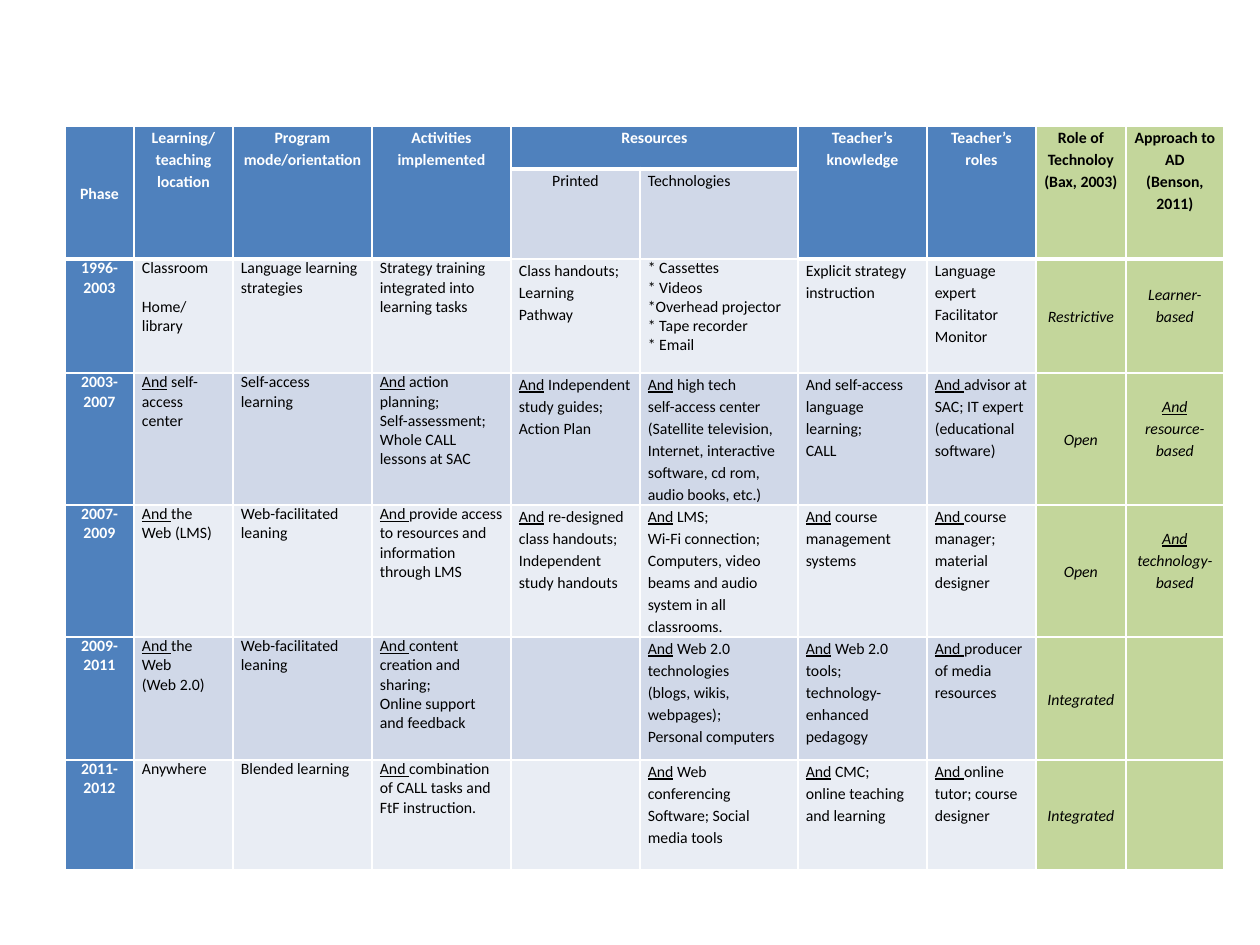
from lxml import etree
from pptx import Presentation
from pptx.dml.color import RGBColor
from pptx.enum.text import MSO_ANCHOR, PP_ALIGN
from pptx.oxml.ns import qn
from pptx.util import Emu, Pt

LEFT, CENTER = PP_ALIGN.LEFT, PP_ALIGN.CENTER
TOP, MIDDLE = MSO_ANCHOR.TOP, MSO_ANCHOR.MIDDLE

WHITE, BLACK = "FFFFFF", "000000"
BLUE, GREEN = "4F81BD", "C3D69B"
PALE, SOFT = "E9EDF4", "D0D8E8"
INSET, LINE = 8, 22
LOOSE, TIGHT = 1.15, 1.0

TABLE_BOX = (65, 126, 1159, 744)
COLUMN_WIDTHS = [69, 99, 139, 139, 129, 158, 129, 109, 90, 98]
ROW_HEIGHTS = [43, 90, 114, 132, 132, 123, 110]
RESOURCE_COLUMNS = (4, 5)
ROLE, APPROACH = 8, 9
PHASE_START = 2

HEADINGS = {
    0: "Phase",
    1: "Learning/ teaching\nlocation",
    2: "Program mode/orientation",
    3: "Activities implemented",
    4: "Resources",
    6: "Teacher’s knowledge",
    7: "Teacher’s roles",
    8: "Role of\nTechnoloy\n(Bax, 2003)",
    9: "Approach to AD\n(Benson, 2011)",
}

PHASES = [
    ["1996-2003", "Classroom\nHome/\nlibrary", "Language learning strategies",
     "Strategy training integrated into learning tasks",
     "Class handouts;\nLearning\nPathway",
     "* Cassettes\n* Videos\n*Overhead projector\n* Tape recorder\n* Email",
     "Explicit strategy instruction", "Language expert Facilitator\nMonitor",
     "Restrictive", "Learner-based"],
    ["2003-2007", "_And_ self-access center", "Self-access learning",
     "_And_ action planning;\nSelf-assessment;\nWhole CALL lessons at SAC",
     "_And_ Independent study guides; Action Plan",
     "_And_ high tech\nself-access center\n(Satellite television, Internet, "
     "interactive software, cd rom, audio books, etc.)",
     "And self-access language learning;\nCALL",
     "_And _advisor at SAC; IT expert (educational software)",
     "Open", "_And _resource-based"],
    ["2007-2009", "_And _the Web (LMS)", "Web-facilitated leaning",
     "_And _provide access to resources and information through LMS",
     "_And_ re-designed class handouts;\nIndependent study handouts",
     "_And_ LMS;\nWi-Fi connection; Computers, video beams and audio system "
     "in all classrooms.",
     "_And_ course management systems",
     "_And _course manager; material designer",
     "Open", "_And _technology-based"],
    ["2009-2011", "_And _the Web\n(Web 2.0)", "Web-facilitated leaning",
     "_And _content creation and sharing;\nOnline support and feedback", "",
     "_And_ Web 2.0 technologies\n(blogs, wikis, webpages);\nPersonal computers",
     "_And_ Web 2.0 tools; technology-enhanced pedagogy",
     "_And _producer of media resources", "Integrated", ""],
    ["2011-2012", "Anywhere", "Blended learning",
     "_And _combination of CALL tasks and FtF instruction.", "",
     "_And_ Web conferencing\nSoftware; Social media tools",
     "_And_ CMC;\nonline teaching and learning",
     "_And _online tutor; course designer", "Integrated", ""],
]


def px(length):
    return Emu(round(length * 914400 / 126))


def color(value):
    return RGBColor.from_string(value)


def rule_below(row, column):
    under_heading = row == 0 or (row == 1 and column not in RESOURCE_COLUMNS)
    return 3 if under_heading else 1


def draw_rules(cell, row, column):
    above = rule_below(row - 1, column) if row else 1
    widths = {"L": 1, "R": 1, "T": above, "B": rule_below(row, column)}
    properties = cell._tc.get_or_add_tcPr()
    for side, width in widths.items():
        rule = etree.SubElement(properties, qn("a:ln" + side), w=str(Pt(width)))
        fill = etree.SubElement(rule, qn("a:solidFill"))
        etree.SubElement(fill, qn("a:srgbClr"), val=WHITE)


def paint_cell(table, row, column, fill):
    cell = table.cell(row, column)
    draw_rules(cell, row, column)
    cell.fill.solid()
    cell.fill.fore_color.rgb = color(fill)
    cell.margin_left = cell.margin_right = px(INSET)
    cell.margin_top = cell.margin_bottom = 0
    return cell


def write_cell(cell, text, align=LEFT, anchor=TOP, spacing=LOOSE,
               ink=BLACK, bold=False, italic=False):
    cell.vertical_anchor = anchor
    frame = cell.text_frame
    for index, line in enumerate(text.split("\n")):
        paragraph = frame.add_paragraph() if index else frame.paragraphs[0]
        paragraph.alignment = align
        paragraph.line_spacing = spacing
        paragraph.font.size = Pt(9)
        for part, words in enumerate(line.split("_")):
            if not words:
                continue
            run = paragraph.add_run()
            run.text = words
            run.font.name = "Calibri"
            run.font.size = Pt(9)
            run.font.bold = bold
            run.font.italic = italic
            run.font.underline = part % 2 == 1
            run.font.color.rgb = color(ink)


def add_headings(table):
    for column in range(len(COLUMN_WIDTHS)):
        fill = GREEN if column >= ROLE else BLUE
        paint_cell(table, 0, column, fill)
        paint_cell(table, 1, column, SOFT if column in RESOURCE_COLUMNS else fill)
        if column not in RESOURCE_COLUMNS:
            table.cell(0, column).merge(table.cell(1, column))
    first, last = RESOURCE_COLUMNS
    table.cell(0, first).merge(table.cell(0, last))
    for column, heading in HEADINGS.items():
        write_cell(table.cell(0, column), heading, CENTER,
                   TOP if column else MIDDLE,
                   ink=BLACK if column >= ROLE else WHITE, bold=True)
    write_cell(table.cell(1, first), "Printed", CENTER)
    write_cell(table.cell(1, last), "Technologies")


def add_phase(table, row, entries):
    band = SOFT if row % 2 else PALE
    for column, entry in enumerate(entries):
        fill = BLUE if column == 0 else GREEN if column >= ROLE else band
        cell = paint_cell(table, row, column, fill)
        if column == 0:
            write_cell(cell, entry, CENTER, spacing=TIGHT, ink=WHITE, bold=True)
        elif column >= ROLE:
            write_cell(cell, entry, CENTER, MIDDLE, italic=True)
        else:
            tight = column <= 3 or entry.startswith("*")
            write_cell(cell, entry, spacing=TIGHT if tight else LOOSE)
        if column == APPROACH:
            cell.margin_bottom = px(LINE)


def add_phase_table(slide, box):
    table = slide.shapes.add_table(
        len(ROW_HEIGHTS), len(COLUMN_WIDTHS), *map(px, box)).table
    table.first_row = table.horz_banding = False
    for column, width in zip(table.columns, COLUMN_WIDTHS):
        column.width = px(width)
    for row, height in zip(table.rows, ROW_HEIGHTS):
        row.height = px(height)
    add_headings(table)
    for row, entries in enumerate(PHASES, PHASE_START):
        add_phase(table, row, entries)
    home = table.cell(PHASE_START, 1).text_frame.paragraphs[1]
    home.space_before = Pt(11)


def main():
    deck = Presentation()
    deck.slide_width, deck.slide_height = px(1260), px(945)
    slide = deck.slides.add_slide(deck.slide_layouts[6])
    add_phase_table(slide, TABLE_BOX)
    deck.save("out.pptx")


if __name__ == "__main__":
    main()
